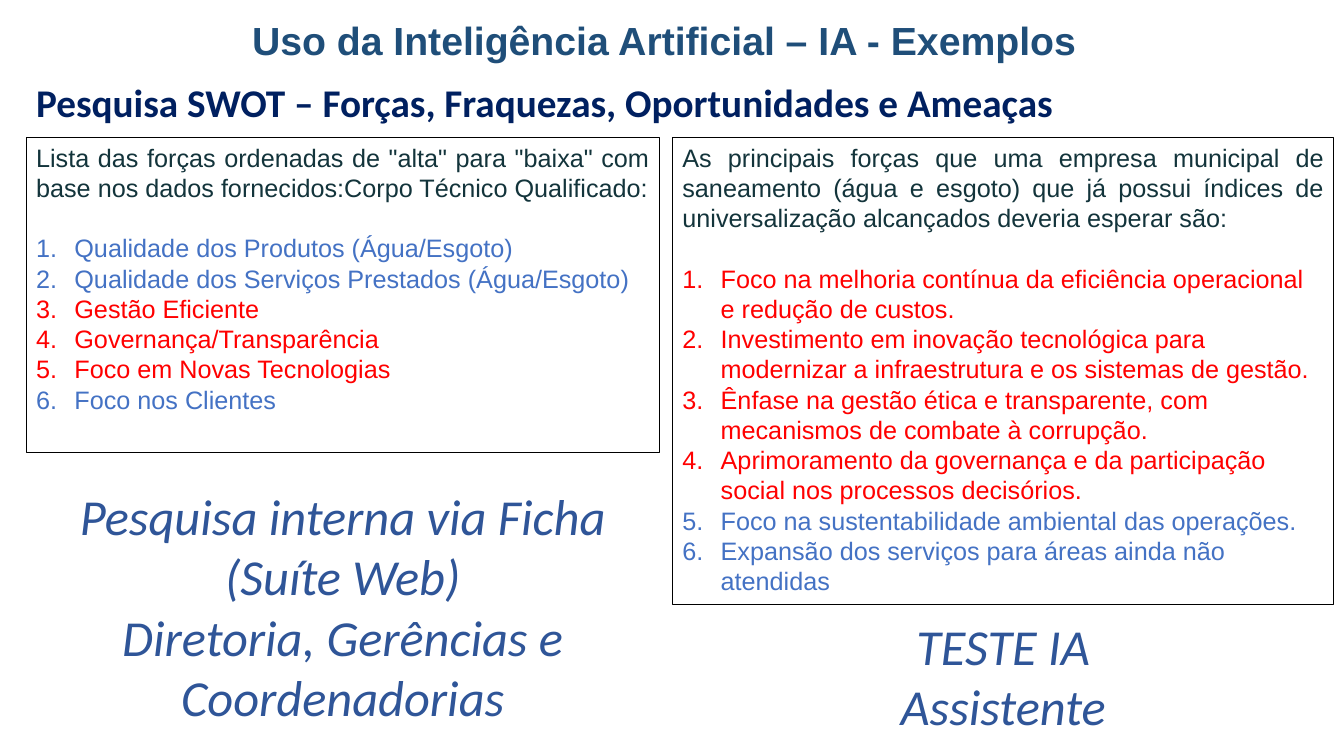
from dataclasses import dataclass

from lxml import etree
from pptx import Presentation
from pptx.dml.color import RGBColor
from pptx.enum.shapes import MSO_SHAPE
from pptx.enum.text import MSO_ANCHOR, MSO_AUTO_SIZE, PP_ALIGN
from pptx.oxml.ns import qn
from pptx.util import Pt

RECTANGLE = MSO_SHAPE.RECTANGLE
TOP = MSO_ANCHOR.TOP
NO_AUTOFIT = MSO_AUTO_SIZE.NONE
LEFT, CENTER, JUSTIFY = PP_ALIGN.LEFT, PP_ALIGN.CENTER, PP_ALIGN.JUSTIFY
TITLE_ONLY = 5
PX = 9144  # 100 px to the inch


@dataclass(frozen=True)
class Theme:
    body_font: str = "Arial"
    accent_font: str = "Calibri"
    title: str = "1F4E79"
    subtitle: str = "002060"
    intro: str = "13343B"
    blue: str = "4472C4"
    red: str = "FF0000"
    caption: str = "2F5598"
    border: str = "000000"
    heading_size: int = 28
    body_size: int = 18
    caption_size: int = 36
    body_line: float = 21.6
    border_width: float = 0.75


THEME = Theme()

# Content
TITLE = "Uso da Inteligência Artificial – IA - Exemplos"
SUBTITLE = "Pesquisa SWOT – Forças, Fraquezas, Oportunidades e Ameaças"
PANELS = [
    {
        "left": 26, "width": 628, "height": 313,
        "intro": 'Lista das forças ordenadas de "alta" para "baixa" com base nos '
                 "dados fornecidos:Corpo Técnico Qualificado:",
        "items": [
            ("Qualidade dos Produtos (Água/Esgoto)", THEME.blue),
            ("Qualidade dos Serviços Prestados (Água/Esgoto)", THEME.blue),
            ("Gestão Eficiente", THEME.red),
            ("Governança/Transparência", THEME.red),
            ("Foco em Novas Tecnologias", THEME.red),
            ("Foco nos Clientes", THEME.blue),
        ],
        "caption": ["Pesquisa interna via Ficha (Suíte Web)",
                    "Diretoria, Gerências e Coordenadorias"],
        "caption_top": 476, "caption_height": 252,
    },
    {
        "left": 667, "width": 656, "height": 464,
        "intro": "As principais forças que uma empresa municipal de saneamento "
                 "(água e esgoto) que já possui índices de universalização "
                 "alcançados deveria esperar são:",
        "items": [
            ("Foco na melhoria contínua da eficiência operacional e redução "
             "de custos.", THEME.red),
            ("Investimento em inovação tecnológica para modernizar a "
             "infraestrutura e os sistemas de gestão.", THEME.red),
            ("Ênfase na gestão ética e transparente, com mecanismos de combate "
             "à corrupção.", THEME.red),
            ("Aprimoramento da governança e da participação social nos "
             "processos decisórios.", THEME.red),
            ("Foco na sustentabilidade ambiental das operações.", THEME.blue),
            ("Expansão dos serviços para áreas ainda não atendidas", THEME.blue),
        ],
        "caption": ["TESTE IA", "Assistente"],
        "caption_top": 605, "caption_height": 131,
    },
]
PANEL_TOP = 136
NUMBER_INDENT = 38


def scaled(*lengths):
    return [length * PX for length in lengths]


def prepare(box):
    frame = box.text_frame
    frame.word_wrap = True
    frame.auto_size = NO_AUTOFIT
    frame.vertical_anchor = TOP
    return frame


def write(para, text, font, size, color, align=LEFT, bold=False, italic=False):
    para.text = text
    para.alignment = align
    for span in para.runs:
        span.font.name = font
        span.font.size = Pt(size)
        span.font.color.rgb = RGBColor.from_string(color)
        span.font.bold = bold
        span.font.italic = italic


def number(para):
    properties = para._p.get_or_add_pPr()
    properties.set("marL", str(NUMBER_INDENT * PX))
    properties.set("indent", str(-NUMBER_INDENT * PX))
    font = etree.SubElement(properties, qn("a:buFont"))
    font.set("typeface", THEME.body_font)
    etree.SubElement(properties, qn("a:buAutoNum")).set("type", "arabicPeriod")


def add_panel(page, panel):
    box = page.shapes.add_shape(RECTANGLE, *scaled(
        panel["left"], PANEL_TOP, panel["width"], panel["height"]))
    box.shadow.inherit = False
    box.fill.background()
    box.line.color.rgb = RGBColor.from_string(THEME.border)
    box.line.width = Pt(THEME.border_width)
    frame = prepare(box)
    intro = frame.paragraphs[0]
    write(intro, panel["intro"], THEME.body_font, THEME.body_size,
          THEME.intro, JUSTIFY)
    intro.line_spacing = Pt(THEME.body_line)
    for index, (text, color) in enumerate(panel["items"]):
        para = frame.add_paragraph()
        write(para, text, THEME.body_font, THEME.body_size, color)
        para.line_spacing = Pt(THEME.body_line)
        para.space_before = Pt(0 if index else THEME.body_line)
        number(para)


def add_caption(page, panel):
    box = page.shapes.add_textbox(*scaled(
        panel["left"], panel["caption_top"],
        panel["width"], panel["caption_height"]))
    frame = prepare(box)
    for index, text in enumerate(panel["caption"]):
        para = frame.add_paragraph() if index else frame.paragraphs[0]
        write(para, text, THEME.accent_font, THEME.caption_size,
              THEME.caption, CENTER, italic=True)


def main():
    deck = Presentation()
    deck.slide_width, deck.slide_height = scaled(1333, 750)
    page = deck.slides.add_slide(deck.slide_layouts[TITLE_ONLY])

    # Headings
    title = page.shapes.title
    title.left, title.top, title.width, title.height = scaled(240, 11, 996, 57)
    write(prepare(title).paragraphs[0], TITLE, THEME.body_font,
          THEME.heading_size, THEME.title, bold=True)
    subtitle = page.shapes.add_textbox(*scaled(26, 73, 1282, 57))
    write(prepare(subtitle).paragraphs[0], SUBTITLE, THEME.accent_font,
          THEME.heading_size, THEME.subtitle, bold=True)

    # Panels with their captions
    for panel in PANELS:
        add_panel(page, panel)
        add_caption(page, panel)

    deck.save("out.pptx")


if __name__ == "__main__":
    main()
